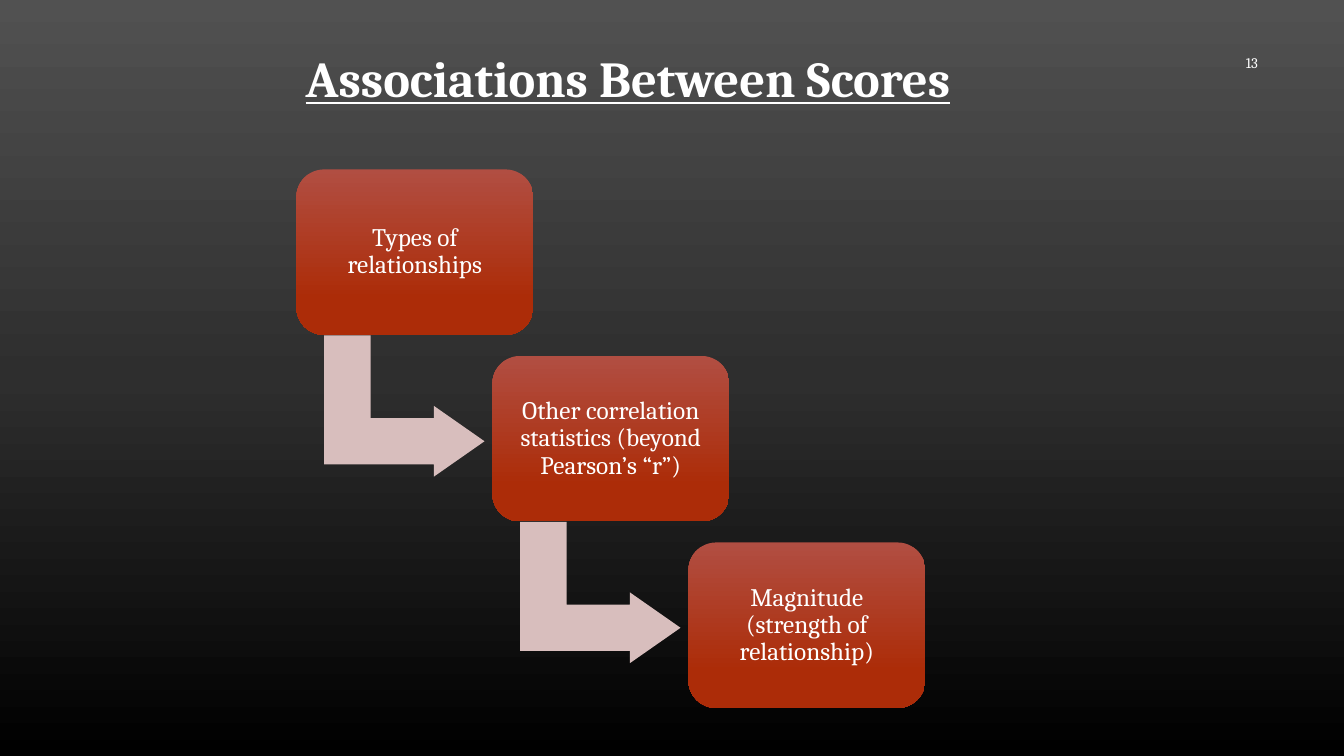
from copy import deepcopy

from pptx import Presentation
from pptx.dml.color import RGBColor
from pptx.enum import shapes, text
from pptx.util import Cm, Pt

WHITE = RGBColor(0xFF, 0xFF, 0xFF)
PINK = RGBColor(0xD8, 0xBE, 0xBD)
BOX_STOPS = [(0, RGBColor(0xB1, 0x4E, 0x42)), (0.78, RGBColor(0xAC, 0x2C, 0x08))]
BACK_STOPS = [
    (0, RGBColor(0x51, 0x51, 0x51)),
    (0.5, RGBColor(0x2E, 0x2E, 0x2E)),
    (1, RGBColor(0, 0, 0)),
]
FONT = "Cambria"
STEPS = [
    "Types of relationships",
    "Other correlation statistics (beyond Pearson’s “r”)",
    "Magnitude (strength of relationship)",
]
# Staircase, in centimetres
LEFT, TOP = 7.47, 4.27
WIDE, HIGH = 5.97, 4.17
STEP_X, STEP_Y = 4.94, 4.7


def write(frame, words, size=18, align=text.PP_ALIGN.CENTER,
          anchor=text.MSO_ANCHOR.MIDDLE, bold=False, line=False,
          inset=None, space=None):
    frame.word_wrap = True
    frame.auto_size = text.MSO_AUTO_SIZE.NONE
    frame.vertical_anchor = anchor
    if inset is not None:
        frame.margin_left = frame.margin_right = Cm(inset)
        frame.margin_top = frame.margin_bottom = Cm(inset)
    para = frame.paragraphs[0]
    para.alignment = align
    para.line_spacing = space
    run = para.add_run()
    run.text = words
    font = run.font
    font.name, font.size, font.color.rgb = FONT, Pt(size), WHITE
    font.bold, font.underline = bold, line


def shade(fill, root, stops):
    """Fill from top to bottom with the given colour stops."""
    fill.gradient()
    fill.gradient_angle = 270
    first = root.xpath(".//a:gs")[0]
    for _ in stops[2:]:
        first.addnext(deepcopy(first))
    for stop, (place, tone) in zip(fill.gradient_stops, stops):
        stop.position = place
        stop.color.rgb = tone


def shape(slide, kind, left, top, wide, high, adjust):
    item = slide.shapes.add_shape(kind, Cm(left), Cm(top), Cm(wide), Cm(high))
    item.shadow.inherit = False
    item.line.fill.background()
    for i, value in enumerate(adjust):
        item.adjustments[i] = value
    return item


def arrow(slide, left, top):
    item = shape(slide, shapes.MSO_SHAPE.BENT_UP_ARROW, left, top,
                 3.56, 4.04, [0.328, 0.25, 0.358])
    item.rotation = 90
    item.fill.solid()
    item.fill.fore_color.rgb = PINK


def box(slide, left, top, words):
    item = shape(slide, shapes.MSO_SHAPE.ROUNDED_RECTANGLE, left, top,
                 WIDE, HIGH, [0.167])
    shade(item.fill, item.element, BOX_STOPS)
    write(item.text_frame, words, inset=0.18, space=0.9)


def main():
    deck = Presentation()
    deck.slide_width, deck.slide_height = Cm(33.87), Cm(19.05)
    slide = deck.slides.add_slide(deck.slide_layouts[5])
    shade(slide.background.fill, slide.element, BACK_STOPS)

    # Slide number and title
    number = slide.shapes.add_textbox(Cm(24.33), Cm(1.07), Cm(7.62), Cm(1.02))
    write(number.text_frame, "13", size=10.5, align=text.PP_ALIGN.RIGHT)
    title = slide.shapes.title
    title.left, title.top = Cm(5.08), Cm(1.07)
    title.width, title.height = Cm(21.49), Cm(2.57)
    write(title.text_frame, "Associations Between Scores", size=36,
          anchor=text.MSO_ANCHOR.TOP, bold=True, line=True)

    # Steps, each but the last with an arrow to the next
    for i, words in enumerate(STEPS):
        left, top = LEFT + i * STEP_X, TOP + i * STEP_Y
        if i < len(STEPS) - 1:
            arrow(slide, left + 0.94, top + 3.94)
        box(slide, left, top, words)

    deck.save("out.pptx")


if __name__ == "__main__":
    main()
